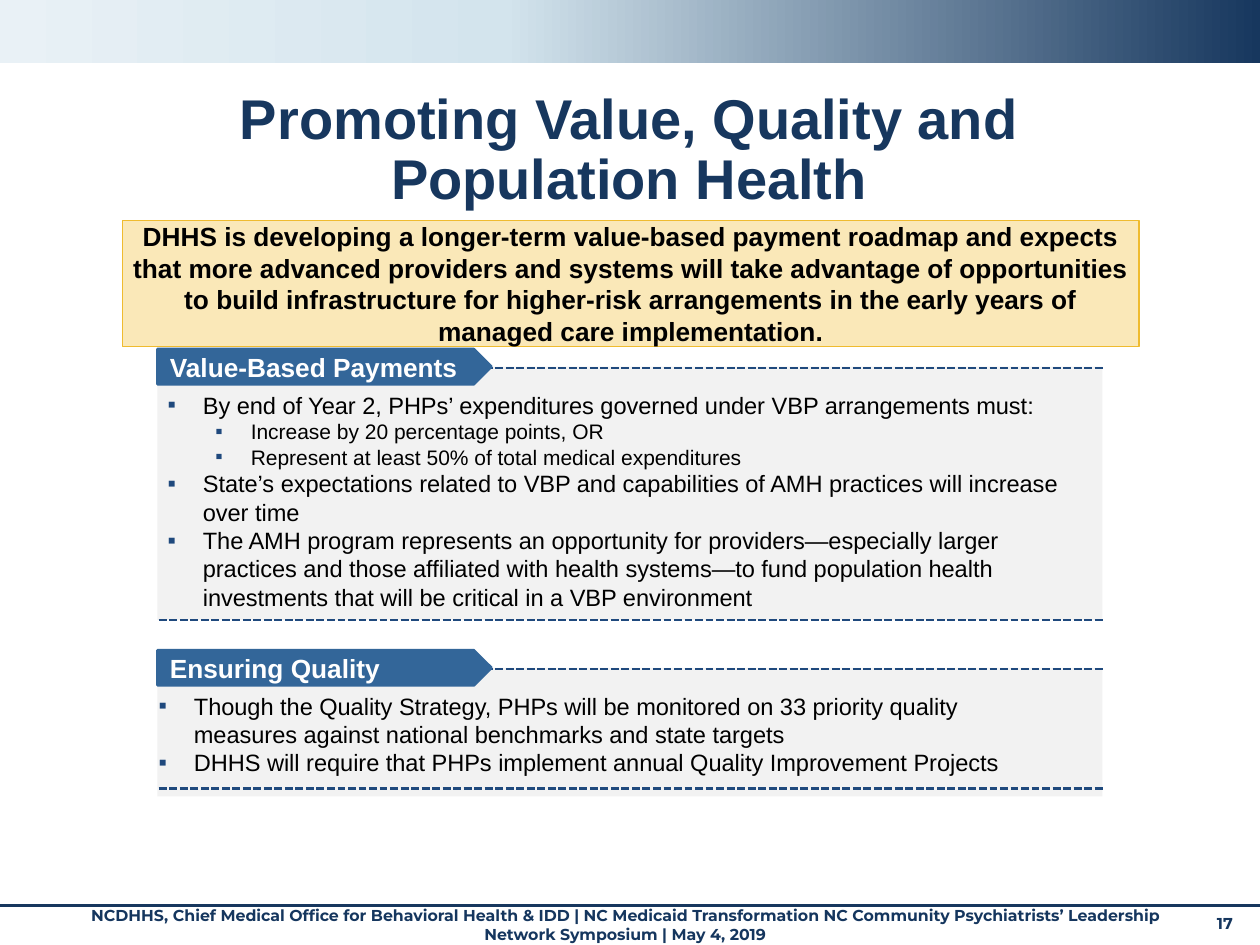
"""Build the slide on value, quality and population health."""
import copy
from dataclasses import dataclass

import pptx
import pptx.dml.color
import pptx.enum.dml
import pptx.enum.shapes
import pptx.enum.text
import pptx.oxml
import pptx.oxml.ns
import pptx.util

COLS, ROWS = 100, 75
WIDE, HIGH = pptx.util.Inches(10), pptx.util.Inches(7.5)
FORM = pptx.enum.shapes.MSO_SHAPE
ALIGN = pptx.enum.text.PP_ALIGN
ANCHOR = pptx.enum.text.MSO_ANCHOR
NARROW = (0.08, 0.04, 0.08, 0.04)
PLAIN = (0.1, 0.05, 0.1, 0.05)


@dataclass(frozen=True)
class Theme:
    """Hold the fonts, colours and type sizes."""
    body: str = "Arial"
    foot: str = "Montserrat"
    navy: str = "17375E"
    ink: str = "15365E"
    dash: str = "1F497D"
    tag: str = "336699"
    panel: str = "F2F2F2"
    note: str = "FAE8B8"
    edge: str = "EFBB2F"
    black: str = "000000"
    white: str = "FFFFFF"
    fade: tuple = ((0, "17375E"), (0.6, "D3E4ED"), (1, "E9F1F6"))
    title: float = 32
    head: float = 15
    items: tuple = (13.5, 12)
    small: float = 9


THEME = Theme()


def rgb(code):
    """Turn a hex code into a colour."""
    return pptx.dml.color.RGBColor.from_string(code)


def col(count):
    """Give the length of some grid columns."""
    return round(WIDE * count / COLS)


def row(count):
    """Give the length of some grid rows."""
    return round(HIGH * count / ROWS)


def place(left, top, width, height):
    """Turn a grid box into lengths."""
    return col(left), row(top), col(width), row(height)


def apply(thing, values):
    """Set each named value on a thing."""
    for name, value in values.items():
        setattr(thing, name, value)


def write(para, text, size, shade, font=THEME.body, bold=True, align=ALIGN.LEFT):
    """Put one styled run in a paragraph."""
    para.alignment = align
    run = para.add_run()
    run.text = text
    apply(run.font, {"size": pptx.util.Pt(size), "name": font, "bold": bold})
    run.font.color.rgb = rgb(shade)


def frame(shape, inset=PLAIN, anchor=ANCHOR.TOP):
    """Set up the text frame of a shape."""
    sides = ("margin_left", "margin_top", "margin_right", "margin_bottom")
    values = {side: pptx.util.Inches(gap) for side, gap in zip(sides, inset)}
    apply(shape.text_frame, {**values, "word_wrap": True, "vertical_anchor": anchor,
                             "auto_size": pptx.enum.text.MSO_AUTO_SIZE.NONE})
    return shape.text_frame


def label(slide, box, text, size, shade, **style):
    """Add a text box with one paragraph."""
    area = frame(slide.shapes.add_textbox(*place(*box)))
    write(area.paragraphs[0], text, size, shade, **style)


def block(slide, box, fill, form=FORM.RECTANGLE, edge=None, weight=1):
    """Add a filled shape with an optional edge."""
    shape = slide.shapes.add_shape(form, *place(*box))
    shape.shadow.inherit = False
    shape.fill.solid()
    shape.fill.fore_color.rgb = rgb(fill)
    if edge:
        shape.line.color.rgb = rgb(edge)
        shape.line.width = pptx.util.Pt(weight)
    else:
        shape.line.fill.background()
    return shape


def rule(slide, left, right, top, shade, weight, dash=None):
    """Add a level line."""
    line = slide.shapes.add_connector(pptx.enum.shapes.MSO_CONNECTOR.STRAIGHT,
                                      col(left), row(top), col(right), row(top))
    line.line.color.rgb = rgb(shade)
    apply(line.line, {"width": pptx.util.Pt(weight), "dash_style": dash})
    pptx.oxml.ns.qn("a:effectLst")
    line._element.spPr.append(pptx.oxml.parse_xml(
        f'<a:effectLst {pptx.oxml.ns.nsdecls("a")}/>'))


def band(slide):
    """Add the fading band along the top."""
    shape = block(slide, (0, 0, COLS, 5), THEME.navy)
    shape.fill.gradient()
    shape.fill.gradient_angle = 180
    stops = shape._element.spPr.find(".//" + pptx.oxml.ns.qn("a:gsLst"))
    stops.append(copy.deepcopy(stops[-1]))
    for stop, (spot, shade) in zip(shape.fill.gradient_stops, THEME.fade):
        stop.color.rgb = rgb(shade)
        stop.position = spot


def bullet(para, level):
    """Give a paragraph a square bullet and hanging indent."""
    para.level = level + 1
    props = para._p.get_or_add_pPr()
    props.set("marL", str(pptx.util.Inches(0.56 + 0.38 * level)))
    props.set("indent", str(pptx.util.Inches(-0.28)))
    space = pptx.oxml.ns.nsdecls("a")
    for part in (f'<a:buClr {space}><a:srgbClr val="{THEME.dash}"/></a:buClr>',
                 f'<a:buFont {space} typeface="{THEME.body}"/>',
                 f'<a:buChar {space} char="▪"/>'):
        props.append(pptx.oxml.parse_xml(part))


def section(slide, name, top, height, base, left, width, items):
    """Add a panel with its tag, dashed rules and bullet list."""
    block(slide, (12.5, top, 75, height), THEME.panel)
    area = frame(slide.shapes.add_textbox(*place(left, top + 1.5, width, height - 1.5)), NARROW)
    for index, (level, text) in enumerate(items):
        para = area.add_paragraph() if index else area.paragraphs[0]
        write(para, text, THEME.items[level], THEME.black, bold=False)
        bullet(para, level)
    for spot in (top + 0.1, base):
        rule(slide, 12.6, 87.5, spot, THEME.dash, 1.5, pptx.enum.dml.MSO_LINE.SQUARE_DOT)
    tag = block(slide, (12.5, top - 1.4, 26.5, 2.8), THEME.tag, FORM.PENTAGON, THEME.tag, 1.5)
    write(frame(tag, anchor=ANCHOR.MIDDLE).paragraphs[0], name, THEME.head, THEME.white)


def heading(slide, text):
    """Place and style the title."""
    title = slide.shapes.title
    apply(title, dict(zip(("left", "top", "width", "height"), place(7.4, 6.8, 85.8, 8.8))))
    para = frame(title, (0, 0.04, 0.07, 0.04)).paragraphs[0]
    write(para, text, THEME.title, THEME.navy, align=ALIGN.CENTER)
    para.line_spacing = 0.9


def footer(slide, text, number):
    """Add the rule, the footer text and the page number."""
    rule(slide, 0, COLS, 71.9, THEME.navy, 1.75)
    label(slide, (5, 71.4, 89.2, 3.7), text, THEME.small, THEME.ink,
          font=THEME.foot, align=ALIGN.CENTER)
    label(slide, (95.6, 72, 4.4, 3), number, THEME.small, THEME.ink, font=THEME.foot)


def callout(slide, text):
    """Add the framed key message."""
    box = block(slide, (9.7, 17.5, 80.7, 10), THEME.note, edge=THEME.edge, weight=0.75)
    write(frame(box, NARROW, ANCHOR.MIDDLE).paragraphs[0], text, THEME.head, THEME.black,
          align=ALIGN.CENTER)


def main():
    """Build and save the slide."""
    deck = pptx.Presentation()
    apply(deck, {"slide_width": WIDE, "slide_height": HIGH})
    slide = deck.slides.add_slide(deck.slide_layouts[5])
    band(slide)
    footer(slide, "NCDHHS, Chief Medical Office for Behavioral Health & IDD | NC Medicaid Transformation "
           "NC Community Psychiatrists’ Leadership Network Symposium | May 4, 2019", "17")
    heading(slide, "Promoting Value, Quality and Population Health")
    callout(slide, "DHHS is developing a longer-term value-based payment roadmap and expects that more "
            "advanced providers and systems will take advantage of opportunities to build infrastructure "
            "for higher-risk arrangements in the early years of managed care implementation.")
    section(slide, "Value-Based Payments", 29.1, 20.1, 49.2, 9.7, 77.5, (
        (0, "By end of Year 2, PHPs’ expenditures governed under VBP arrangements must:"),
        (1, "Increase by 20 percentage points, OR"),
        (1, "Represent at least 50% of total medical expenditures"),
        (0, "State’s expectations related to VBP and capabilities of AMH practices will increase over time"),
        (0, "The AMH program represents an opportunity for providers—especially larger practices and those "
            "affiliated with health systems—to fund population health investments that will be critical "
            "in a VBP environment")))
    section(slide, "Ensuring Quality", 53, 10.2, 62.6, 9, 74.7, (
        (0, "Though the Quality Strategy, PHPs will be monitored on 33 priority quality measures against "
            "national benchmarks and state targets"),
        (0, "DHHS will require that PHPs implement annual Quality Improvement Projects")))
    deck.save("out.pptx")


if __name__ == "__main__":
    main()
